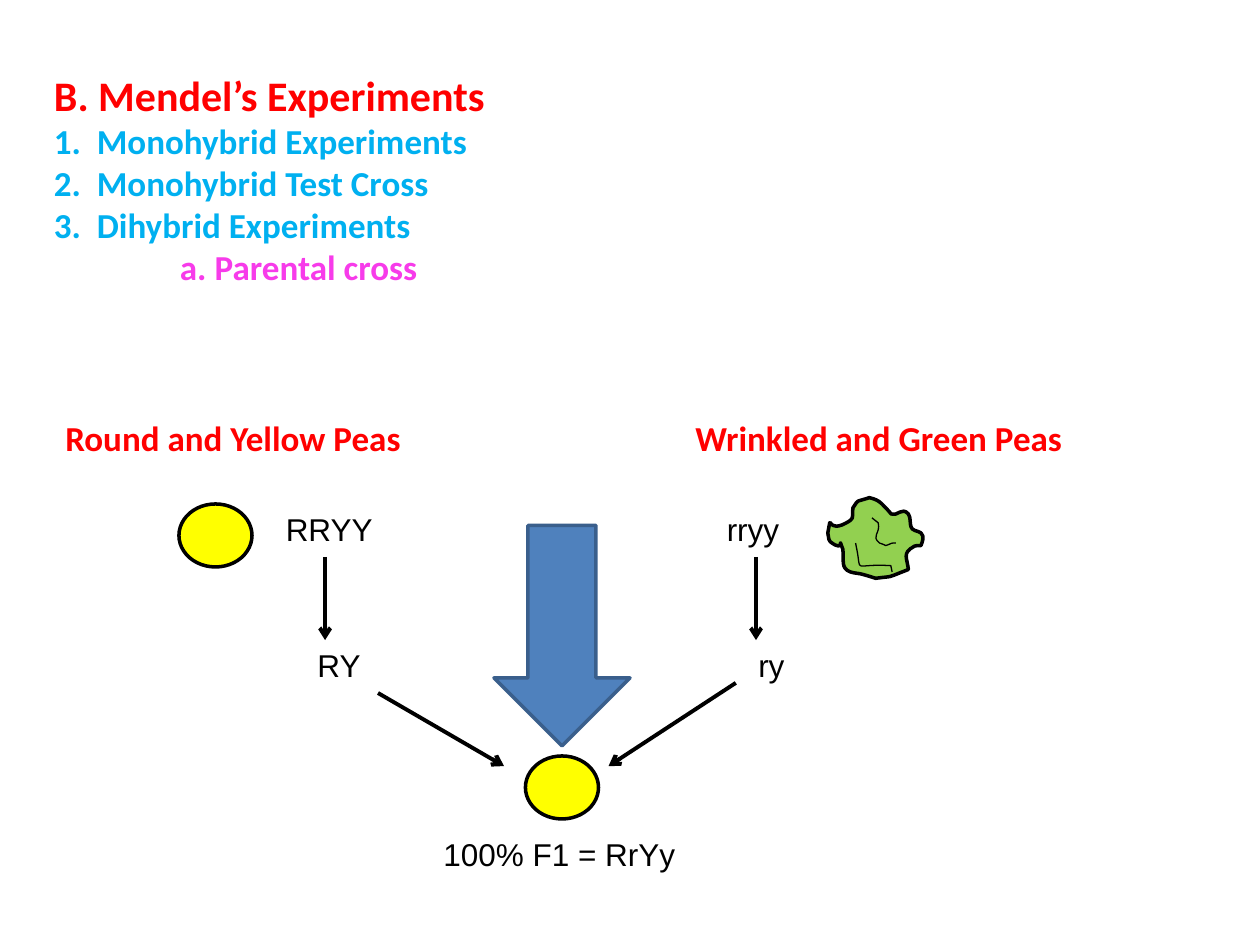
from lxml import etree
from pptx import Presentation
from pptx.dml.color import RGBColor
from pptx.enum.shapes import MSO_CONNECTOR, MSO_SHAPE
from pptx.enum.text import MSO_ANCHOR
from pptx.oxml.ns import qn
from pptx.util import Inches, Pt

OVAL, DOWN = MSO_SHAPE.OVAL, MSO_SHAPE.DOWN_ARROW
STRAIGHT = MSO_CONNECTOR.STRAIGHT
TOP, BOTTOM = MSO_ANCHOR.TOP, MSO_ANCHOR.BOTTOM
COLORS = {"red": "FF0000", "sky": "00B0F0", "pink": "F73BEA", "black": "000000",
          "yellow": "FFFF00", "green": "92D050", "blue": "4F81BD", "navy": "3A5F8C"}

# Text styles
HEAD = {"name": "Calibri", "size": Pt(24), "bold": True, "color": "red"}
ITEM = {**HEAD, "size": Pt(20), "color": "sky"}
STEP = {**ITEM, "color": "pink"}
PEAS = {**ITEM, "color": "red"}
GENE = {"name": "Arial", "size": Pt(18), "bold": False, "color": "black"}

# Text boxes: place, anchor, then paragraphs of (text, style, left margin, first indent)
TEXTS = [
    ((0.42, 2.75, 9.17, 0.94), BOTTOM,
     [("Round and Yellow Peas\t\t\tWrinkled and Green Peas", PEAS, 0, 0)]),
    ((0.33, 0.5, 6.08, 2.36), TOP, [
        ("B. Mendel’s Experiments", HEAD, 0, 0),
        ("1.\tMonohybrid Experiments", ITEM, 0.34, -0.34),
        ("2.\tMonohybrid Test Cross", ITEM, 0.34, -0.34),
        ("3.\tDihybrid Experiments", ITEM, 0.34, -0.34),
        ("a. Parental cross", STEP, 1, 0)]),
    ((2.17, 4, 1.5, 0.4), TOP, [("RRYY", GENE, 0, 0)]),
    ((5.67, 4, 1, 0.42), TOP, [("rryy", GENE, 0, 0)]),
    ((2.42, 5.08, 0.58, 0.42), TOP, [("RY", GENE, 0, 0)]),
    ((5.92, 5.08, 0.67, 0.42), TOP, [("ry", GENE, 0, 0)]),
    ((3.42, 6.58, 3, 0.4), TOP, [("100% F1 = RrYy", GENE, 0, 0)]),
]

# Preset shapes: kind, place, fill, line
SHAPES = [
    (OVAL, (1.42, 4, 0.58, 0.5), "yellow", "black"),
    (DOWN, (3.92, 4.17, 1.08, 1.75), "blue", "navy"),
    (OVAL, (4.17, 6, 0.58, 0.5), "yellow", "black"),
]

# Arrows: start x, y, end x, y
ARROWS = [(2.58, 4.42, 2.58, 5.08), (6, 4.42, 6, 5.08),
          (3, 5.5, 4, 6.08), (5.84, 5.42, 4.83, 6.08)]

# Wrinkled pea: start, then segments of one point (line) or three (curve)
SKIN = [(7.08, 4.08),
        (7.05, 4.07, 7.11, 4.11, 7, 4), (6.97, 3.97, 6.94, 3.96, 6.9, 3.95),
        (6.78, 3.99, 6.82, 3.96, 6.77, 4.03), (6.76, 4.07, 6.78, 4.11, 6.75, 4.13),
        (6.54, 4.27, 6.61, 4.03, 6.57, 4.23), (6.58, 4.25, 6.57, 4.28, 6.59, 4.3),
        (6.72, 4.4, 6.64, 4.23, 6.69, 4.36), (6.7, 4.45, 6.67, 4.51, 6.75, 4.54),
        (6.78, 4.55, 6.82, 4.55, 6.85, 4.56), (6.89, 4.57, 6.95, 4.59, 6.95, 4.59),
        (7.1, 4.57, 7.03, 4.59, 7.16, 4.54), (7.21, 4.52),
        (7.2, 4.43, 7.16, 4.39, 7.25, 4.34), (7.26, 4.33, 7.29, 4.33, 7.31, 4.33),
        (7.32, 4.3, 7.34, 4.26, 7.31, 4.23), (7.3, 4.22, 7.28, 4.22, 7.26, 4.21),
        (7.25, 4.2, 7.23, 4.2, 7.23, 4.18), (7.22, 4.15, 7.23, 4.11, 7.21, 4.08),
        (7.16, 4.02, 7.12, 4.1, 7.08, 4.08)]
FOLDS = [
    [(6.92, 4.11), (6.93, 4.13, 6.96, 4.13, 6.97, 4.15),
     (6.99, 4.24, 6.91, 4.25, 6.98, 4.31), (7, 4.32, 7.02, 4.32, 7.03, 4.33),
     (7.09, 4.31, 7.06, 4.31, 7.11, 4.31)],
    [(6.79, 4.31), (6.79, 4.33, 6.8, 4.34, 6.8, 4.36),
     (6.84, 4.56, 6.76, 4.47, 7.07, 4.49), (7.08, 4.54)],
]


def rgb(name):
    return RGBColor.from_string(COLORS[name])


def paint(shape, fill, line, width):
    shape.shadow.inherit = False
    if fill:
        shape.fill.solid()
        shape.fill.fore_color.rgb = rgb(fill)
    else:
        shape.fill.background()
    shape.line.color.rgb = rgb(line)
    shape.line.width = Pt(width)


def draw(outline, fill, width, close):
    """Join the segment ends, then bend the segments that are curves."""
    first, *rest = [tuple(map(Inches, part[-2:])) for part in outline]
    pen = slide.shapes.build_freeform(*first)
    pen.add_line_segments(rest, close=close)
    shape = pen.convert_to_shape()
    lines = list(shape._element.iter(qn("a:lnTo")))
    for line, part in zip(lines, outline[1:]):
        if len(part) == 6:
            line.tag = qn("a:cubicBezTo")
            for i in (0, 2):
                spot = etree.Element(qn("a:pt"), x=str(Inches(part[i]) - shape.left),
                                     y=str(Inches(part[i + 1]) - shape.top))
                line.insert(i // 2, spot)
    paint(shape, fill, "black", width)


def write(place, anchor, paras):
    frame = slide.shapes.add_textbox(*map(Inches, place)).text_frame
    frame.word_wrap = True
    frame.vertical_anchor = anchor
    for i, (text, style, left, indent) in enumerate(paras):
        para = frame.add_paragraph() if i else frame.paragraphs[0]
        props = para._p.get_or_add_pPr()
        for key, value in {"marL": left, "indent": indent, "defTabSz": 1}.items():
            props.set(key, str(Inches(value)))
        run = para.add_run()
        run.text = text
        for key, value in style.items():
            if key == "color":
                run.font.color.rgb = rgb(value)
            else:
                setattr(run.font, key, value)


prs = Presentation()
prs.slide_width, prs.slide_height = Inches(10), Inches(7.5)
slide = prs.slides.add_slide(prs.slide_layouts[6])

# Round peas and the big arrow
for kind, place, fill, line in SHAPES:
    paint(slide.shapes.add_shape(kind, *map(Inches, place)), fill, line, 2)

# Wrinkled pea
draw(SKIN, "green", 2, True)
for fold in FOLDS:
    draw(fold, None, 0.75, False)

# Words
for place, anchor, paras in TEXTS:
    write(place, anchor, paras)

# Thin arrows
for ends in ARROWS:
    arrow = slide.shapes.add_connector(STRAIGHT, *map(Inches, ends))
    arrow.line.color.rgb = rgb("black")
    arrow.line.width = Pt(2.25)
    etree.SubElement(arrow.line._get_or_add_ln(), qn("a:tailEnd"), type="arrow")
    etree.SubElement(arrow._element.spPr, qn("a:effectLst"))

prs.save("out.pptx")
